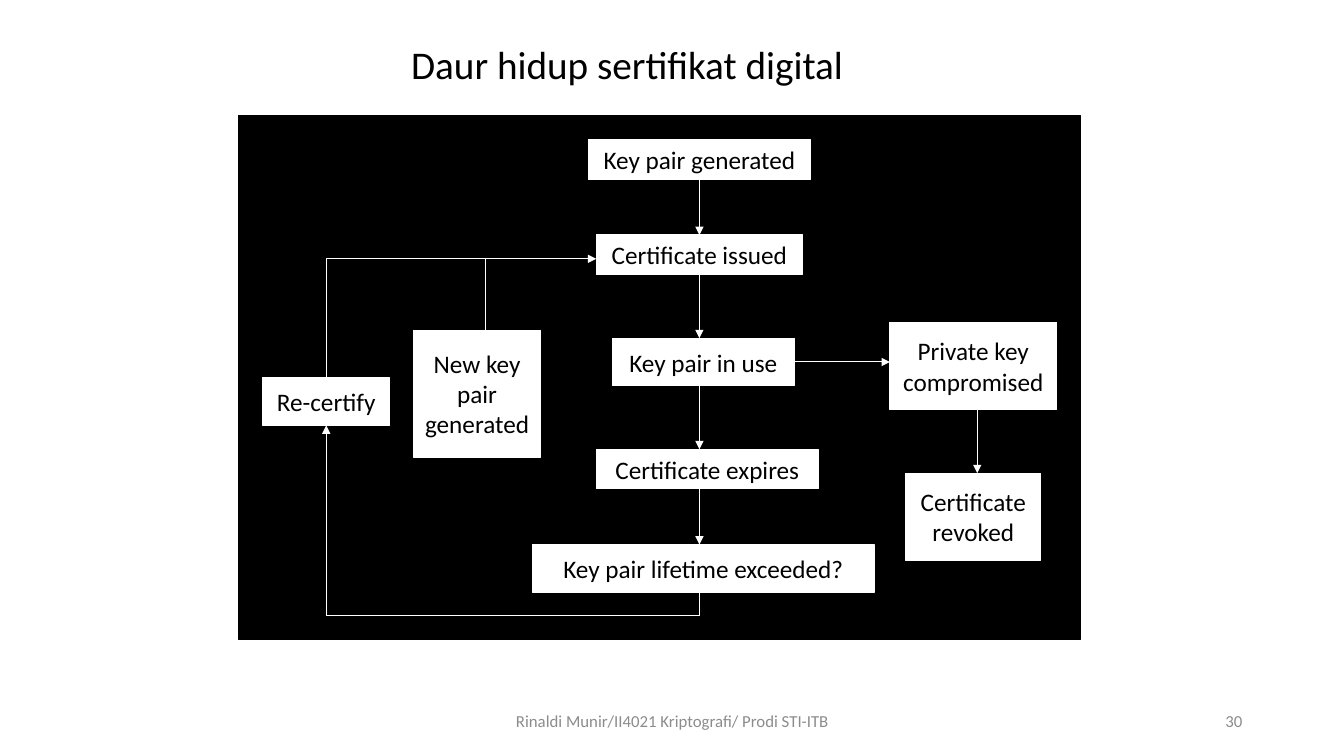
from lxml import etree
from pptx import Presentation
from pptx.dml.color import RGBColor
from pptx.enum.shapes import MSO_CONNECTOR, MSO_SHAPE
from pptx.enum.text import MSO_ANCHOR, PP_ALIGN
from pptx.oxml.ns import qn
from pptx.util import Inches, Mm, Pt

STRAIGHT = MSO_CONNECTOR.STRAIGHT
RECTANGLE = MSO_SHAPE.RECTANGLE
TOP, MIDDLE = MSO_ANCHOR.TOP, MSO_ANCHOR.MIDDLE
LEFT, CENTER, RIGHT = PP_ALIGN.LEFT, PP_ALIGN.CENTER, PP_ALIGN.RIGHT
BLACK, WHITE, GREY = "000000", "FFFFFF", "8C8C8C"

UNIT = Mm(2)
DIAGRAM_LEFT, DIAGRAM_TOP = Inches(2.37), Inches(1.15)


def paint(color_format, color):
    color_format.rgb = RGBColor.from_string(color)


def write(shape, text, size, color, align, anchor):
    frame = shape.text_frame
    frame.text = text
    frame.vertical_anchor = anchor
    for paragraph in frame.paragraphs:
        paragraph.alignment = align
        paragraph.font.name = "Calibri"
        paragraph.font.size = Pt(size)
        paint(paragraph.font.color, color)


deck = Presentation()
deck.slide_width, deck.slide_height = Inches(13.33), Inches(7.5)
slide = deck.slides.add_slide(deck.slide_layouts[6])
shapes = slide.shapes

captions = [
    ("Rinaldi Munir/II4021 Kriptografi/ Prodi STI-ITB",
     4.42, 6.95, 4.5, 0.4, 12, GREY, CENTER, MIDDLE),
    ("30", 9.42, 6.95, 3, 0.4, 12, GREY, RIGHT, MIDDLE),
    ("Daur hidup sertifikat digital",
     3.98, 0.35, 6.74, 0.57, 28, BLACK, LEFT, TOP),
]
for text, left, top, width, height, size, color, align, anchor in captions:
    caption = shapes.add_textbox(*map(Inches, (left, top, width, height)))
    caption.text_frame.word_wrap = True
    write(caption, text, size, color, align, anchor)

# column, row, columns, rows
stages = [
    ("", 0, 0, 106, 66, BLACK),
    ("Key pair generated", 44, 3, 28, 5, WHITE),
    ("Certificate issued", 45, 15, 26, 5, WHITE),
    ("Key pair in use", 47, 28, 23, 6, WHITE),
    ("Private key\ncompromised", 82, 26, 21, 11, WHITE),
    ("Certificate\nrevoked", 84, 45, 17, 11, WHITE),
    ("Certificate expires", 45, 42, 28, 5, WHITE),
    ("Key pair lifetime exceeded?", 37, 54, 43, 6, WHITE),
    ("New key\npair\ngenerated", 22, 27, 16, 16, WHITE),
    ("Re-certify", 3, 33, 16, 6, WHITE),
]
side_middles = {}
for text, column, row, columns, rows, color in stages:
    stage = shapes.add_shape(
        RECTANGLE, DIAGRAM_LEFT + column * UNIT, DIAGRAM_TOP + row * UNIT,
        columns * UNIT, rows * UNIT)
    stage.shadow.inherit = False
    stage.fill.solid()
    paint(stage.fill.fore_color, color)
    paint(stage.line.color, color)
    stage.line.width = Pt(0.75)
    if text:
        stage.text_frame.word_wrap = False
        write(stage, text, 18, BLACK, CENTER, MIDDLE)
        center, middle = column + columns / 2, row + rows / 2
        sides = [(center, row), (column, middle),
                 (center, row + rows), (column + columns, middle)]
        for side, point in enumerate(sides):
            side_middles[point] = (stage, side)

SPINE, RETURN, RENEWAL, REVOCATION = 58, 11, 31, 93
flows = [
    ((SPINE, 8), (SPINE, 15), True),
    ((SPINE, 20), (SPINE, 28), True),
    ((SPINE, 34), (SPINE, 42), True),
    ((SPINE, 47), (SPINE, 54), True),
    ((70, 31), (82, 31), True),
    ((REVOCATION, 37), (REVOCATION, 45), True),
    ((SPINE, 60), (SPINE, 63), False),
    ((SPINE, 63), (RETURN, 63), False),
    ((RETURN, 63), (RETURN, 39), True),
    ((RETURN, 33), (RETURN, 18), False),
    ((RENEWAL, 27), (RENEWAL, 18), False),
    ((RETURN, 18), (45, 18), True),
]
for start, end, has_arrow in flows:
    flow = shapes.add_connector(
        STRAIGHT,
        DIAGRAM_LEFT + start[0] * UNIT, DIAGRAM_TOP + start[1] * UNIT,
        DIAGRAM_LEFT + end[0] * UNIT, DIAGRAM_TOP + end[1] * UNIT)
    if start in side_middles:
        flow.begin_connect(*side_middles[start])
    if end in side_middles:
        flow.end_connect(*side_middles[end])
    paint(flow.line.color, WHITE)
    flow.line.width = Pt(0.75)
    if has_arrow:
        etree.SubElement(flow.line._get_or_add_ln(), qn("a:tailEnd"), type="triangle")
    etree.SubElement(flow._element.spPr, qn("a:effectLst"))

deck.save("out.pptx")
